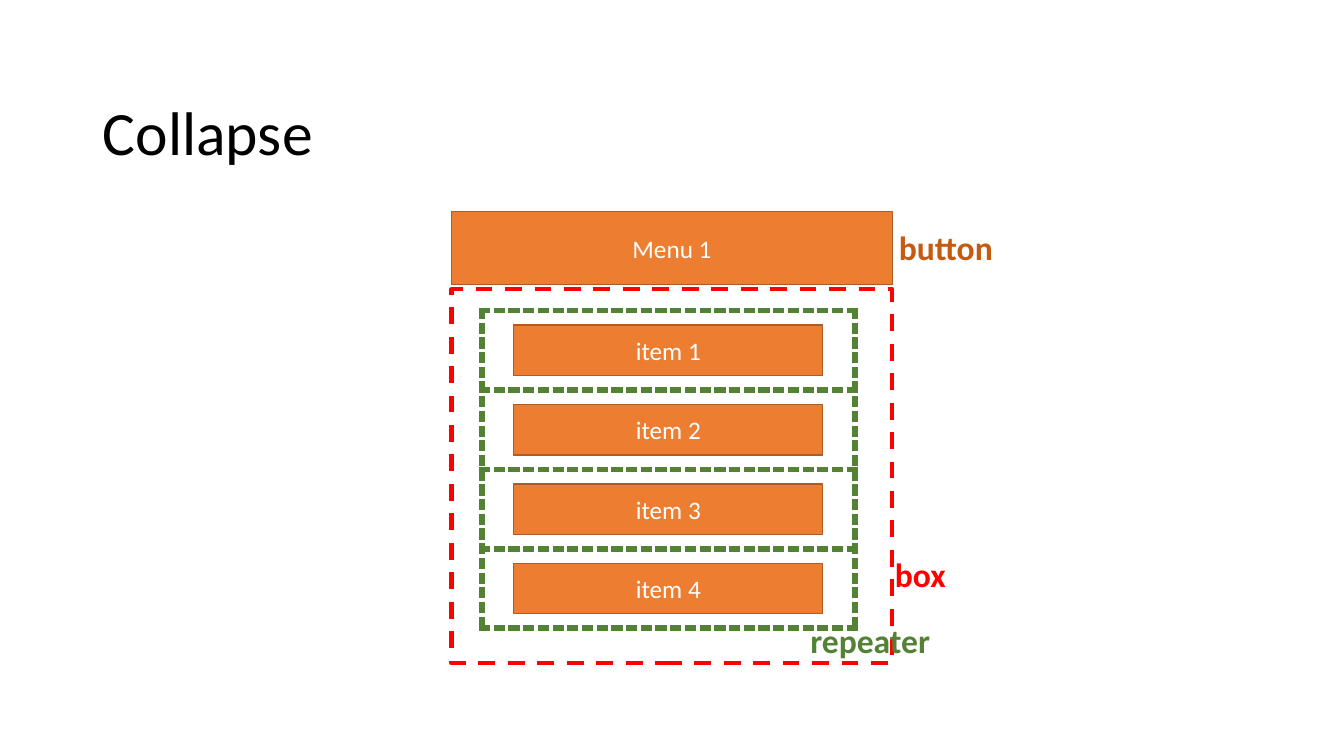
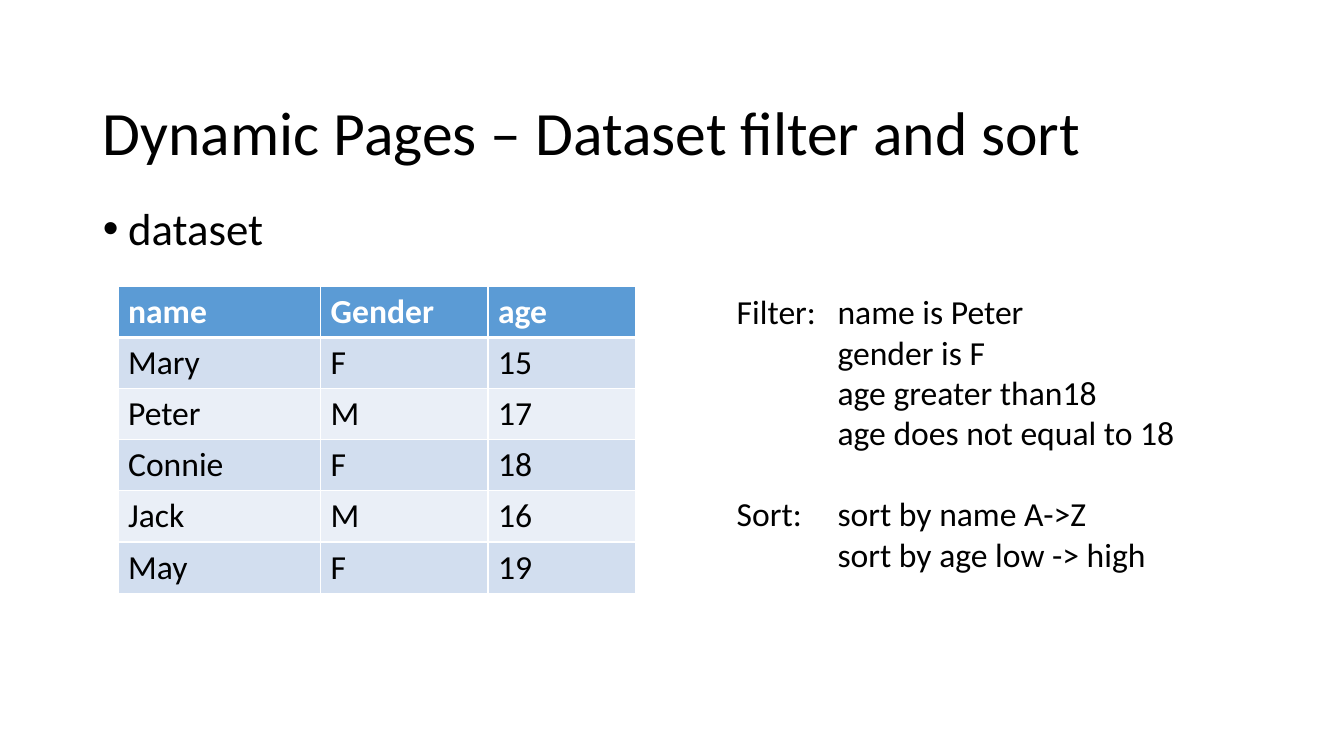
from pptx import Presentation, util as u
from pptx.dml.color import RGBColor
from pptx.enum import dml, shapes, text
from pptx.oxml import parse_xml
from pptx.oxml.ns import nsdecls

WIDE, HIGH = u.Inches(13.33), u.Inches(7.5)
FONT = "Calibri"
BLACK = RGBColor(0, 0, 0)
WHITE = RGBColor(255, 255, 255)
ORANGE = RGBColor(0xED, 0x7D, 0x31)
RUST = RGBColor(0xAF, 0x5C, 0x24)
BROWN = RGBColor(0xC5, 0x5A, 0x11)
RED = RGBColor(255, 0, 0)
GREEN = RGBColor(0x54, 0x82, 0x35)
BLUE = RGBColor(0x5B, 0x9B, 0xD5)
BANDS = [RGBColor(0xEA, 0xEF, 0xF7), RGBColor(0xD2, 0xDE, 0xEF)]


def area(x, y, w, h):
    """Turn percentages of the slide into lengths."""
    return [u.Emu(round(side * part / 100))
            for side, part in zip((WIDE, HIGH) * 2, (x, y, w, h))]


def style(frame, size, color, bold=False):
    """Format every run of a text frame."""
    for par in frame.paragraphs:
        for run in par.runs:
            font = run.font
            font.name, font.size, font.bold = FONT, u.Pt(size), bold
            font.color.rgb = color


def place(holder, spot, words, size):
    """Move, fill and format a placeholder."""
    holder.left, holder.top, holder.width, holder.height = area(*spot)
    frame = holder.text_frame
    frame.text = words
    par = frame.paragraphs[0]
    par.alignment = text.PP_ALIGN.LEFT
    par.line_spacing, par.space_before = 0.9, u.Pt(0)
    style(frame, size, BLACK)
    return frame


def page(prs, layout, title):
    """Add a slide with the shared title style."""
    slide = prs.slides.add_slide(prs.slide_layouts[layout])
    frame = place(slide.shapes.title, (6.9, 9.33, 86.25, 17.33), title, 44)
    frame.vertical_anchor = text.MSO_ANCHOR.MIDDLE
    return slide


def block(slide, spot, words):
    """Add an orange button."""
    rect = slide.shapes.add_shape(shapes.MSO_SHAPE.RECTANGLE, *area(*spot))
    rect.shadow.inherit = False
    rect.fill.solid()
    rect.fill.fore_color.rgb = ORANGE
    rect.line.color.rgb, rect.line.width = RUST, u.Pt(1)
    frame = rect.text_frame
    frame.text = words
    frame.vertical_anchor = text.MSO_ANCHOR.MIDDLE
    frame.paragraphs[0].alignment = text.PP_ALIGN.CENTER
    style(frame, 18, WHITE)


def outline(slide, spot):
    """Add a dashed red frame."""
    rect = slide.shapes.add_shape(shapes.MSO_SHAPE.RECTANGLE, *area(*spot))
    rect.shadow.inherit = False
    rect.fill.background()
    rect.line.color.rgb, rect.line.width = RED, u.Pt(3)
    rect.line.dash_style = dml.MSO_LINE.DASH


def label(slide, spot, words, color=BLACK, bold=False, wrap=False):
    """Add a text box that grows with its text."""
    frame = slide.shapes.add_textbox(*area(*spot)).text_frame
    frame.word_wrap = wrap
    frame.auto_size = text.MSO_AUTO_SIZE.SHAPE_TO_FIT_TEXT
    frame.text = words
    style(frame, 24, color, bold)
    return frame


def border(cell, color, widths, dash="solid"):
    """Draw the left, right, top and bottom borders of a cell."""
    props = cell._tc.get_or_add_tcPr()
    for side, width in zip("LRTB", widths):
        props.append(parse_xml(
            f'<a:ln{side} {nsdecls("a")} w="{u.Pt(width)}"><a:solidFill>'
            f'<a:srgbClr val="{color}"/></a:solidFill>'
            f'<a:prstDash val="{dash}"/></a:ln{side}>'))


def grid(slide, x, y, cols, rows, step):
    """Add a plain table with the given column shares and row step."""
    spot = area(x, y, sum(cols), rows * step)
    table = slide.shapes.add_table(rows, len(cols), *spot).table
    table.first_row = table.horz_banding = False
    for col, part in zip(table.columns, cols):
        col.width = area(0, 0, part, 0)[2]
    return table


def tabs(frame):
    """Set one tab stop an inch in for each paragraph."""
    for par in frame.paragraphs:
        par._p.get_or_add_pPr().append(parse_xml(
            f'<a:tabLst {nsdecls("a")}>'
            f'<a:tab pos="{u.Inches(1)}" algn="l"/></a:tabLst>'))


def bullet(par):
    """Give a paragraph a hanging bullet."""
    props = par._p.get_or_add_pPr()
    props.set("marL", str(u.Inches(0.25)))
    props.set("indent", str(-u.Inches(0.25)))
    props.append(parse_xml(f'<a:buChar {nsdecls("a")} char="•"/>'))


def menu(prs):
    """Build the collapse menu slide."""
    slide = page(prs, 5, "Collapse")
    left, top, wide, step = 35.85, 41.1, 27.75, 10.5
    table = grid(slide, left, top, [wide], 4, step)
    for cell in table.iter_cells():
        border(cell, GREEN, [4.5] * 4, "sysDash")
        cell.fill.background()
    block(slide, (33.6, 28, 32.8, 9.6), "Menu 1")
    outline(slide, (33.6, 38.27, 32.8, 49.47))
    w, h = 23, 6.67
    for i in range(4):
        spot = left + (wide - w) / 2, top + i * step + (step - h) / 2, w, h
        block(slide, spot, f"item {i + 1}")
    for words, color, x, y, w in [("box", RED, 65.85, 72.67, 5.3),
                                  ("repeater", GREEN, 59.55, 81.33, 10.5),
                                  ("button", BROWN, 66.15, 29.33, 8.6)]:
        label(slide, (x, y, w, 6.67), words, color, True)


def data(prs):
    """Build the dataset slide."""
    slide = page(prs, 1, "Dynamic Pages – Dataset filter and sort")
    body = place(slide.placeholders[1], (6.9, 26.67, 86.25, 63.47),
                 "dataset", 32)
    bullet(body.paragraphs[0])
    rows = [("name", "Gender", "age"), ("Mary", "F", "15"),
            ("Peter", "M", "17"), ("Connie", "F", "18"),
            ("Jack", "M", "16"), ("May", "F", "19")]
    table = grid(slide, 8.78, 37.87, [15.08, 12.45, 10.95], len(rows), 6.77)
    table.first_row = True
    for r, row in enumerate(rows):
        for c, words in enumerate(row):
            cell = table.cell(r, c)
            cell.text = words
            style(cell.text_frame, 24, BLACK if r else WHITE, r == 0)
            border(cell, WHITE, (1, 1, 3 if r == 1 else 1, 1 if r else 3))
            cell.fill.solid()
            cell.fill.fore_color.rgb = BANDS[r % 2] if r else BLUE
    lines = ["Filter: \tname is Peter", "\tgender is F",
             "\tage greater than18", "\tage does not equal to 18",
             "Sort: \tsort by name A->Z", "\tsort by age low -> high"]
    frame = label(slide, (54.08, 37.87, 39.08, 39.07), "\n".join(lines),
                  wrap=True)
    tabs(frame)
    frame.paragraphs[4].space_before = u.Pt(29)


def main():
    """Build and save the slides."""
    prs = Presentation()
    prs.slide_width, prs.slide_height = WIDE, HIGH
    menu(prs)
    data(prs)
    prs.save("out.pptx")


if __name__ == "__main__":
    main()
